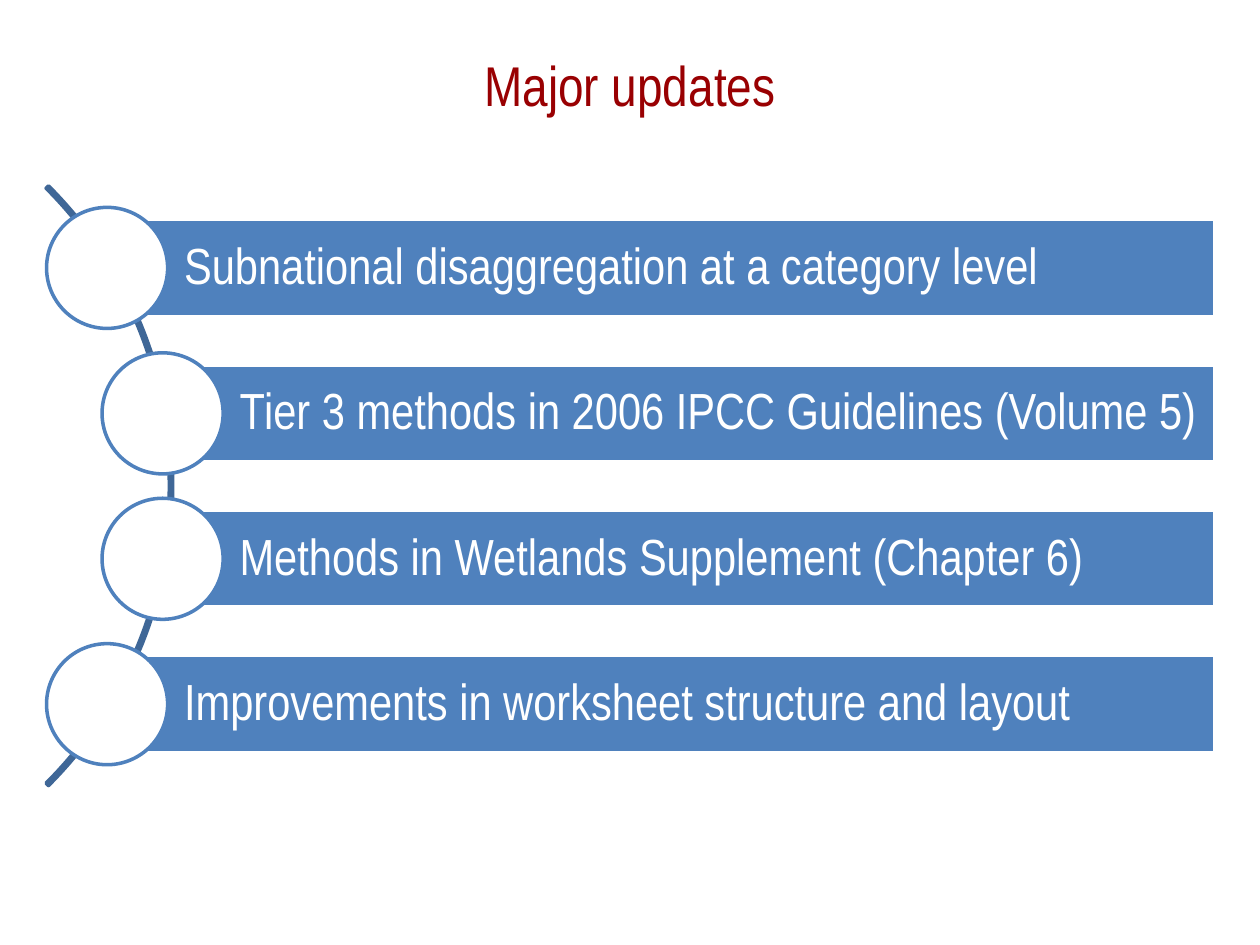
"""Build the "Major updates" slide: four bars with circles along an arc."""
from pptx import Presentation
from pptx.dml.color import RGBColor
from pptx.enum.shapes import MSO_SHAPE
from pptx.enum.text import MSO_ANCHOR, PP_ALIGN
from pptx.util import Pt

COLORS = {"title": "990002", "bar": "4F81BD", "arc": "3F6797", "white": "FFFFFF"}
UPDATES = [
    ("Subnational disaggregation at a category level", 61.2),
    ("Tier 3 methods in 2006 IPCC Guidelines (Volume 5)", 92.9),
    ("Methods in Wetlands Supplement (Chapter 6)", 92.9),
    ("Improvements in worksheet structure and layout", 61.2),
]
BAR_RIGHT, BAR_HEIGHT = 694.1, 55.4
CIRCLE = 69.2
FIRST_CENTER, PITCH = 153.1, 83.1
ARC_LEFT, ARC_TOP, ARC_SIZE = -385.9, 35.3, 484.6
BAR_FRAME = {
    "margin_left": Pt(44), "margin_right": Pt(5.8),
    "margin_top": Pt(5.8), "margin_bottom": Pt(5.8),
    "vertical_anchor": MSO_ANCHOR.MIDDLE, "word_wrap": True,
}


def add_shape(kind, left, top, width, height, fill, line):
    s = slide.shapes.add_shape(kind, Pt(left), Pt(top), Pt(width), Pt(height))
    s.shadow.inherit = False
    s.fill.solid()
    s.fill.fore_color.rgb = RGBColor.from_string(COLORS[fill])
    s.line.color.rgb = RGBColor.from_string(COLORS[line])
    s.line.width = Pt(2)
    return s


def write(tf, text, size, color, align):
    tf.text = text
    p = tf.paragraphs[0]
    p.alignment = align
    font = p.runs[0].font
    font.name = "Arial Narrow"
    font.size = Pt(size)
    font.color.rgb = RGBColor.from_string(COLORS[color])
    return p


prs = Presentation()
prs.slide_width, prs.slide_height = Pt(720), Pt(540)
slide = prs.slides.add_slide(prs.slide_layouts[5])

title = slide.shapes.title
title.left, title.top, title.width, title.height = Pt(21), Pt(26), Pt(678), Pt(44)
title.text_frame.vertical_anchor = MSO_ANCHOR.MIDDLE
write(title.text_frame, "Major updates", 32, "title", PP_ALIGN.CENTER)

arc = add_shape(MSO_SHAPE.BLOCK_ARC, ARC_LEFT, ARC_TOP, ARC_SIZE, ARC_SIZE, "arc", "arc")
for i, value in enumerate((189, 27, 0.004)):
    arc.adjustments[i] = value

for i, (text, left) in enumerate(UPDATES):
    center = FIRST_CENTER + i * PITCH
    bar = add_shape(MSO_SHAPE.RECTANGLE, left, center - BAR_HEIGHT / 2,
                    BAR_RIGHT - left, BAR_HEIGHT, "bar", "white")
    for name, value in BAR_FRAME.items():
        setattr(bar.text_frame, name, value)
    p = write(bar.text_frame, text, 29, "white", PP_ALIGN.LEFT)
    p.line_spacing = 0.9
    add_shape(MSO_SHAPE.OVAL, left - CIRCLE / 2, center - CIRCLE / 2,
              CIRCLE, CIRCLE, "white", "bar")

prs.save("out.pptx")
